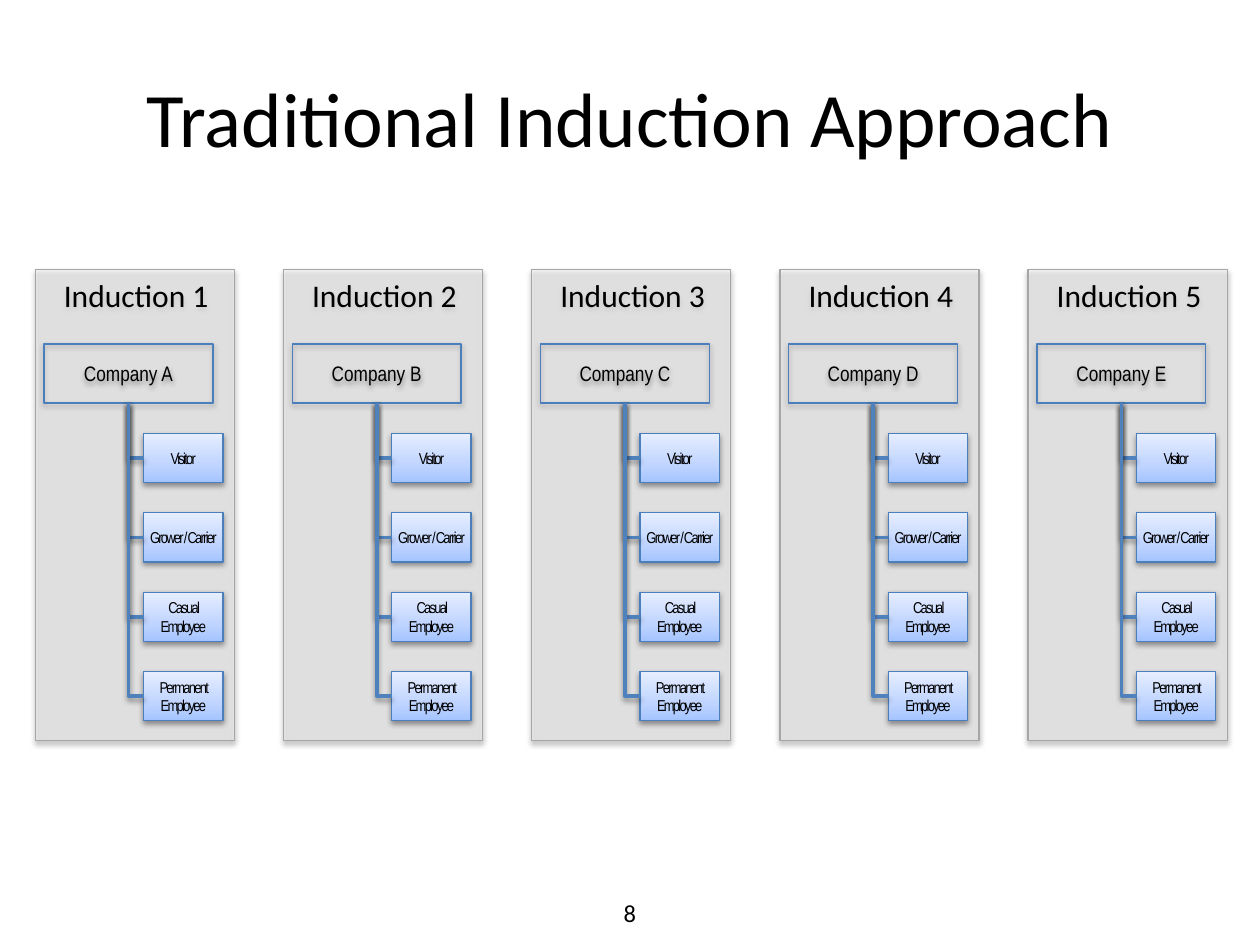
"""Build the slide that compares five separate company inductions."""
from lxml.etree import SubElement
from pptx import Presentation
from pptx.dml.color import RGBColor
from pptx.enum.shapes import MSO_CONNECTOR as Link, MSO_SHAPE as Shape
from pptx.enum.text import MSO_ANCHOR as Anchor, PP_ALIGN as Align
from pptx.oxml.ns import qn
from pptx.util import Inches, Pt

TITLE = "Traditional Induction Approach"
PAGE_NUMBER = "8"
COMPANIES = ["Company A", "Company B", "Company C", "Company D", "Company E"]
ROLES = ["Visitor", "Grower / Carrier", "Casual Employee", "Permanent Employee"]

BLACK = RGBColor(0x00, 0x00, 0x00)
PANEL_GRAY = RGBColor(0xF2, 0xF2, 0xF2)
PANEL_EDGE = RGBColor(0xA6, 0xA6, 0xA6)
BOX_EDGE = RGBColor(0x4B, 0x7E, 0xBC)
LINK_BLUE = RGBColor(0x4F, 0x81, 0xBD)
ROLE_STOPS = [
    (0, RGBColor(0xA4, 0xC4, 0xFF)),
    (35, RGBColor(0xBF, 0xD4, 0xFF)),
    (100, RGBColor(0xE6, 0xEE, 0xFF)),
]

SLIDE_WIDTH, SLIDE_HEIGHT = 10, 7.5
FIRST_COLUMN, COLUMN_STEP = 0.28, 1.97
FIRST_ROW, ROW_STEP = 3.44, 0.63
PANEL_TOP, PANEL_SIZE = 2.14, (1.58, 3.74)
COMPANY_INDENT, COMPANY_TOP, COMPANY_SIZE = 0.07, 2.73, (1.34, 0.47)
ROLE_INDENT, ROLE_SIZE = 0.86, (0.63, 0.39)

TITLE_TEXT = {"size": Pt(44), "name": "Calibri"}
NUMBER_TEXT = {"size": Pt(14), "name": "Calibri"}
PANEL_TEXT = {"size": Pt(18), "name": "Calibri"}
COMPANY_TEXT = {"size": Pt(12), "name": "Arial Narrow"}
ROLE_TEXT = {"size": Pt(9), "name": "Arial Narrow"}
DEFAULT_INSETS = (0.1, 0.05, 0.1, 0.05)
PANEL_INSETS = (0.12, 0.05, 0.1, 0.05)
ROLE_INSETS = (0.04, 0, 0.04, 0)


def write(box, text, font, anchor=Anchor.MIDDLE, insets=DEFAULT_INSETS, spacing=0):
    frame = box.text_frame
    frame.word_wrap = True
    frame.vertical_anchor = anchor
    for side, inset in zip(("left", "top", "right", "bottom"), insets):
        setattr(frame, f"margin_{side}", Inches(inset))
    para = frame.paragraphs[0]
    para.alignment = Align.CENTER
    span = para.add_run()
    span.text = text
    for key, value in font.items():
        setattr(span.font, key, value)
    span.font.color.rgb = BLACK
    if spacing:
        span.font._element.set("spc", str(spacing * 100))


def set_line(item, color, width):
    item.line.color.rgb = color
    item.line.width = Pt(width)


def add_shadow(item):
    effects = SubElement(item.element.spPr, qn("a:effectLst"))
    shadow = SubElement(effects, qn("a:outerShdw"), blurRad="40000", dist="20000",
                        dir="5400000", rotWithShape="0")
    color = SubElement(shadow, qn("a:srgbClr"), val=str(BLACK))
    SubElement(color, qn("a:alpha"), val="38000")


def add_text_box(page, left, top, width, height):
    return page.shapes.add_textbox(*map(Inches, (left, top, width, height)))


def add_box(page, left, top, size, edge):
    box = page.shapes.add_shape(Shape.RECTANGLE, *map(Inches, (left, top, *size)))
    box.fill.background()
    set_line(box, edge, 0.75)
    add_shadow(box)
    return box


def add_panel(page, left, text):
    panel = add_box(page, left, PANEL_TOP, PANEL_SIZE, PANEL_EDGE)
    panel.fill.solid()
    panel.fill.fore_color.rgb = PANEL_GRAY
    color = panel.element.spPr.find(qn("a:solidFill"))[0]
    SubElement(color, qn("a:alpha"), val="50000")
    write(panel, text, PANEL_TEXT, Anchor.TOP, PANEL_INSETS)


def add_role(page, left, top, text):
    role = add_box(page, left, top, ROLE_SIZE, BOX_EDGE)
    role.fill.gradient()
    role.fill.gradient_angle = 90
    stops = role.element.spPr.find(qn("a:gradFill")).find(qn("a:gsLst"))
    for stop in list(stops):
        stops.remove(stop)
    for share, color in ROLE_STOPS:
        stop = SubElement(stops, qn("a:gs"), pos=str(share * 1000))
        SubElement(stop, qn("a:srgbClr"), val=str(color))
    write(role, text, ROLE_TEXT, insets=ROLE_INSETS, spacing=-1)
    return role


def link(page, company, role):
    start_x = company.left + company.width // 2
    start_y = company.top + company.height
    across = role.left - start_x
    down = role.top + role.height // 2 - start_y
    elbow = page.shapes.add_connector(Link.ELBOW, 0, 0, 0, 0)
    elbow.begin_connect(company, 2)
    elbow.end_connect(role, 1)
    turned = {
        "left": start_x + (across - down) // 2,
        "top": start_y + (down - across) // 2,
        "width": down,
        "height": across,
        "rotation": 270,
    }
    for key, value in turned.items():
        setattr(elbow, key, value)
    properties = elbow.element.spPr
    properties.find(qn("a:xfrm")).set("flipH", "1")
    properties.find(qn("a:prstGeom")).set("prst", "bentConnector2")
    set_line(elbow, LINK_BLUE, 2)
    add_shadow(elbow)


def add_induction(page, index, name):
    left = FIRST_COLUMN + index * COLUMN_STEP
    add_panel(page, left, f"Induction {index + 1}")
    roles = [add_role(page, left + ROLE_INDENT, FIRST_ROW + row * ROW_STEP, text)
             for row, text in enumerate(ROLES)]
    company = add_box(page, left + COMPANY_INDENT, COMPANY_TOP, COMPANY_SIZE, BOX_EDGE)
    write(company, name, COMPANY_TEXT)
    for role in roles:
        link(page, company, role)


def main():
    deck = Presentation()
    deck.slide_width, deck.slide_height = Inches(SLIDE_WIDTH), Inches(SLIDE_HEIGHT)
    page = deck.slides.add_slide(deck.slide_layouts[6])
    write(add_text_box(page, 0.5, 0.3, 9, 1.25), TITLE, TITLE_TEXT)
    write(add_text_box(page, 0, 7.08, SLIDE_WIDTH, 0.4), PAGE_NUMBER, NUMBER_TEXT, Anchor.TOP)
    for index, name in enumerate(COMPANIES):
        add_induction(page, index, name)
    deck.save("out.pptx")


if __name__ == "__main__":
    main()
